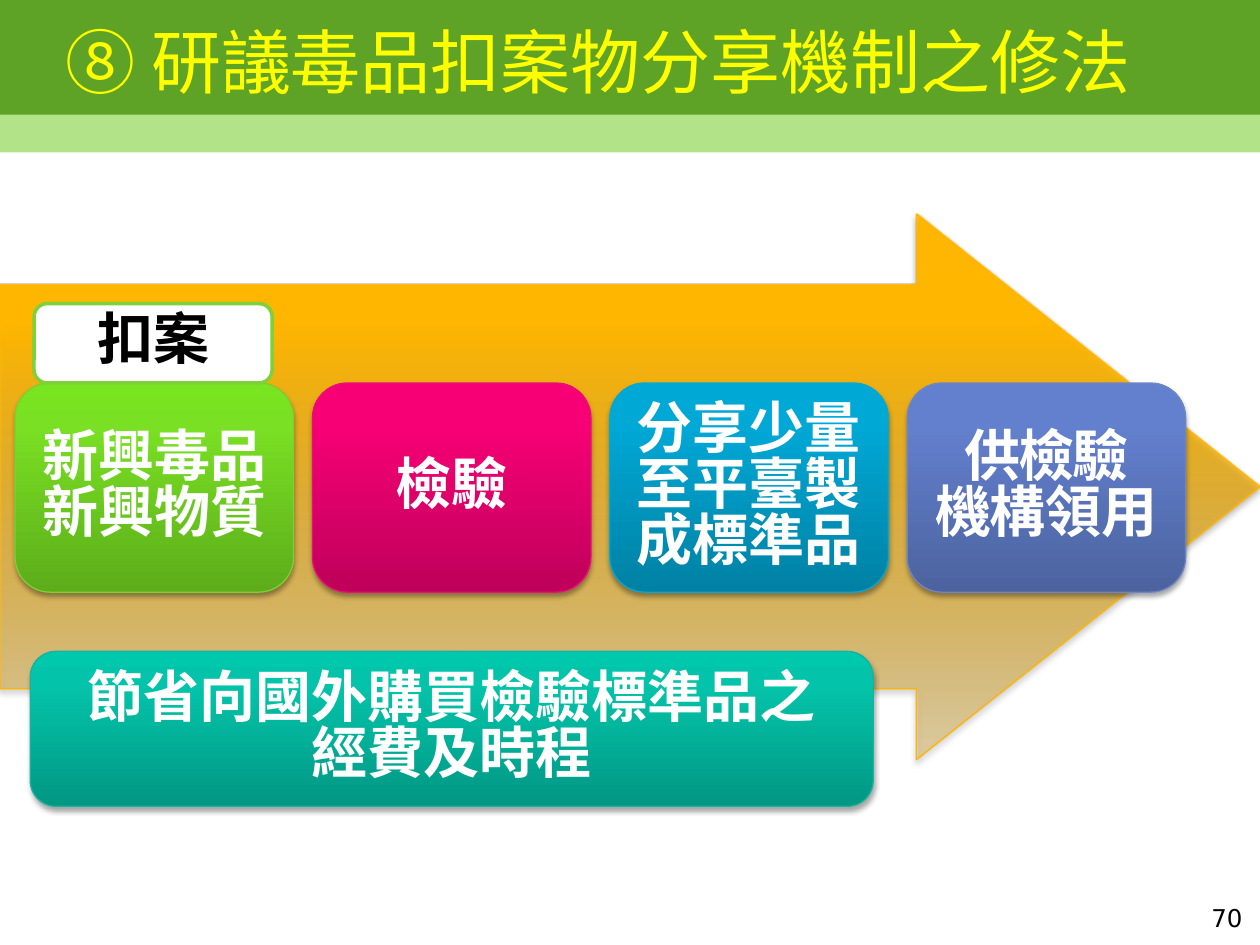
from pptx import Presentation
from pptx.dml.color import RGBColor
from pptx.enum.shapes import MSO_SHAPE as Shape
from pptx.enum.text import MSO_ANCHOR as Anchor, PP_ALIGN as Align
from pptx.oxml import parse_xml
from pptx.oxml.ns import nsdecls, qn
from pptx.util import Inches, Pt

# Content: paragraphs are strings, or lists of (text, letter spacing) runs
TITLE = "⑧ 研議毒品扣案物分享機制之修法"
PAGE_NUMBER = "70"
SEIZURE = ["扣案"]
SAVINGS = ["節省向國外購買檢驗標準品之", "經費及時程"]
STEPS = [
    (["新興毒品", "新興物質"], "green"),
    (["檢驗"], "pink"),
    (["分享少量至平臺製成標準品"], "blue"),
    ([[("供檢驗", -1)], [("機構", -1), ("領用", 0)]], "indigo"),
]

THEME = {
    "band": "5FA326", "band_light": "B2E389", "title": "FFFF00",
    "light": "FFFFFF", "dark": "000000", "tag_line": "7FD13B",
    "title_font": "Arial", "page_font": "DejaVu Sans", "body_font": "Noto Sans CJK SC",
    "title_size": 40, "body_size": 32, "page_size": 14,
    # Gradient colours at 0, 80 and 100 percent, then the outline
    "arrow": ("C58C00", "FFB601", "FFB602", "FEB604"),
    "green": ("5DAD1B", "79E023", "79E520", "7CD036"),
    "pink": ("BE005A", "F70075", "F80076", "EA0F77"),
    "blue": ("0081A4", "00A8D5", "00A8D6", "00A9D7"),
    "indigo": ("4C639F", "6380CE", "6180D1", "6E86C6"),
    "teal": ("029783", "03C4AA", "00C8AD", "16B39E"),
}


def write(frame, paragraphs, font="body_font", size="body_size", color="light",
          bold=True, align=Align.CENTER, anchor=Anchor.MIDDLE, margin=0.1, leading=None):
    frame.word_wrap = True
    frame.vertical_anchor = anchor
    frame.margin_left = frame.margin_right = Inches(margin)
    frame.margin_top = frame.margin_bottom = 0
    for i, runs in enumerate(paragraphs):
        paragraph = frame.paragraphs[0] if i == 0 else frame.add_paragraph()
        paragraph.alignment = align
        if leading:
            paragraph.line_spacing = leading
        for text, spacing in [(runs, 0)] if isinstance(runs, str) else runs:
            run = paragraph.add_run()
            run.text = text
            run.font.name = THEME[font]
            run.font.size = Pt(THEME[size])
            run.font.bold = bold
            run.font.color.rgb = RGBColor.from_string(THEME[color])
            properties = run.font._element
            properties.append(parse_xml(
                f'<a:ea {nsdecls("a")} typeface="{THEME["body_font"]}"/>'))
            if spacing:
                properties.set("spc", str(spacing * 100))


def add_block(slide, kind, box, fill, line=None, line_width=0.75):
    block = slide.shapes.add_shape(kind, *map(Inches, box))
    block.shadow.inherit = False
    block.fill.solid()
    block.fill.fore_color.rgb = RGBColor.from_string(THEME[fill])
    if line:
        block.line.color.rgb = RGBColor.from_string(THEME[line])
        block.line.width = Pt(line_width)
    else:
        block.line.fill.background()
    return block


def add_glossy(slide, kind, box, palette, start_alpha=100):
    """Add a shape with a bottom-to-top gradient and a soft shadow."""
    *colors, outline = THEME[palette]
    glossy = slide.shapes.add_shape(kind, *map(Inches, box))
    glossy.fill.gradient()
    glossy.fill.gradient_angle = 90
    glossy.line.color.rgb = RGBColor.from_string(outline)
    glossy.line.width = Pt(0.75)
    glossy.shadow.inherit = False

    properties = glossy._element.spPr
    stops = properties.find(".//" + qn("a:gsLst"))
    for stop in list(stops):
        stops.remove(stop)
    for position, color, alpha in zip((0, 80, 100), colors, (start_alpha, 100, 100)):
        stops.append(parse_xml(
            f'<a:gs {nsdecls("a")} pos="{position * 1000}"><a:srgbClr val="{color}">'
            f'<a:alpha val="{alpha * 1000}"/></a:srgbClr></a:gs>'))
    properties.find(qn("a:effectLst")).append(parse_xml(
        f'<a:outerShdw {nsdecls("a")} blurRad="{Pt(3.1)}" dist="{Pt(1.8)}" dir="5400000" '
        'rotWithShape="0"><a:srgbClr val="000000"><a:alpha val="35000"/></a:srgbClr>'
        '</a:outerShdw>'))
    return glossy


def main():
    deck = Presentation()
    deck.slide_width, deck.slide_height = Inches(10), Inches(7.5)
    slide = deck.slides.add_slide(deck.slide_layouts[5])

    # Header bands behind the title
    title = slide.shapes.title
    for box, fill in [((0, 0.87, 10, 0.34), "band_light"), ((0, 0, 10, 0.91), "band")]:
        title._element.addprevious(add_block(slide, Shape.RECTANGLE, box, fill)._element)
    title.left, title.top, title.width, title.height = map(Inches, (0.42, 0.17, 9.23, 0.62))
    write(title.text_frame, [TITLE], font="title_font", size="title_size", color="title",
          bold=False, align=Align.LEFT)

    # Page number
    page = slide.shapes.add_textbox(*map(Inches, (7.63, 7.17, 2.33, 0.26)))
    write(page.text_frame, [PAGE_NUMBER], font="page_font", size="page_size", color="dark",
          bold=False, align=Align.RIGHT, anchor=Anchor.TOP)

    # Process arrow
    arrow = add_glossy(slide, Shape.RIGHT_ARROW, (0, 1.7, 10, 4.33), "arrow", start_alpha=28)
    arrow.adjustments[0], arrow.adjustments[1] = 0.74, 0.63

    # Steps at an equal pitch
    left, top, width, height, pitch = 0.12, 3.04, 2.21, 1.66, 2.36
    for i, (lines, palette) in enumerate(STEPS):
        step = add_glossy(slide, Shape.ROUNDED_RECTANGLE,
                          (left + i * pitch, top, width, height), palette)
        write(step.text_frame, lines, leading=0.83)

    # Tag sitting on the first step
    tag = add_block(slide, Shape.ROUNDED_RECTANGLE, (0.27, top - 0.63, 1.89, 0.63),
                    "light", "tag_line", 2)
    write(tag.text_frame, SEIZURE, color="dark", leading=0.83)

    # Benefit
    savings = add_glossy(slide, Shape.ROUNDED_RECTANGLE, (0.24, 5.17, 6.69, 1.23), "teal")
    write(savings.text_frame, SAVINGS, leading=0.83)

    deck.save("out.pptx")


if __name__ == "__main__":
    main()
